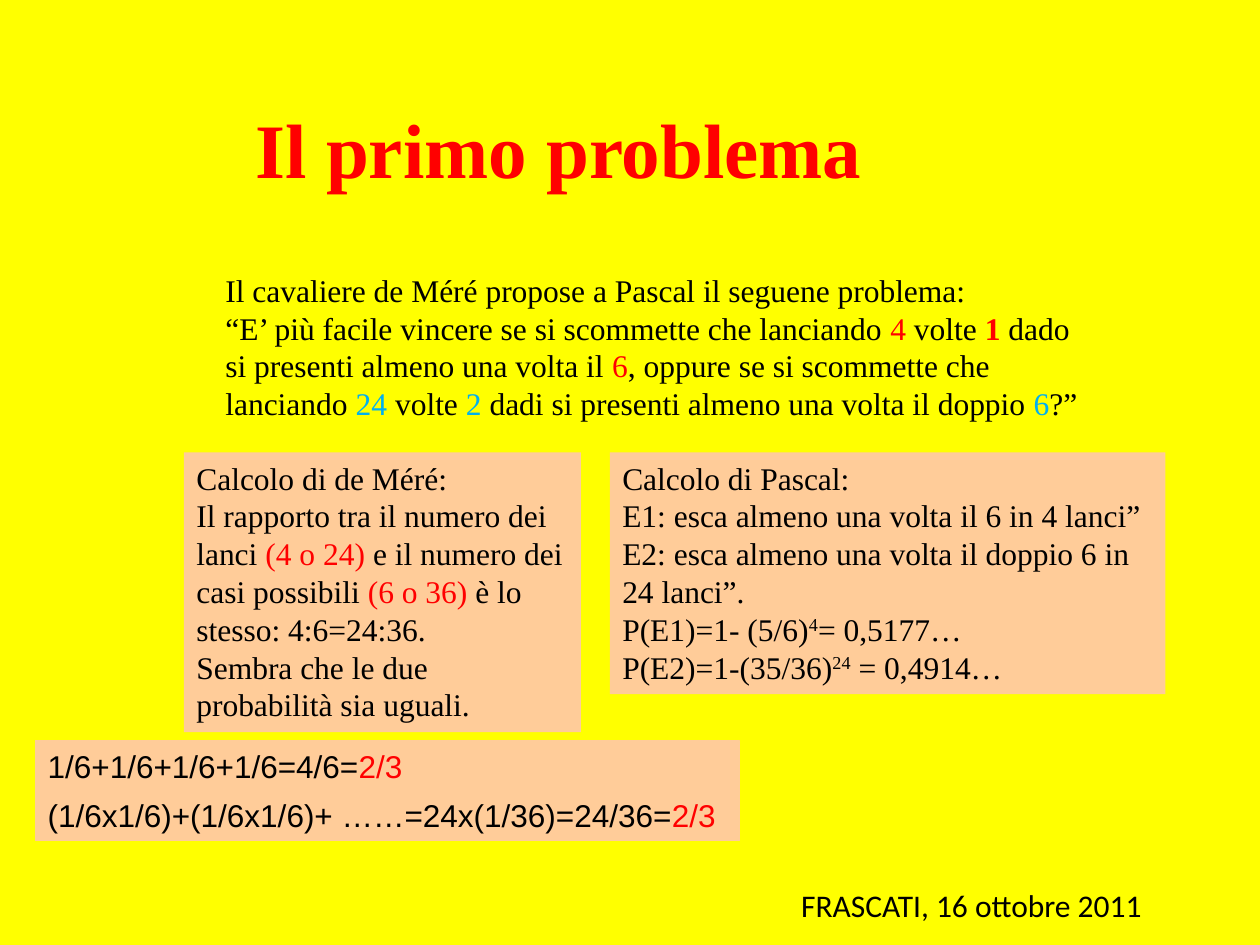
from dataclasses import dataclass

from pptx import Presentation
from pptx import util as u
from pptx.dml.color import RGBColor
from pptx.enum import shapes, text

COLORS = {
    "yellow": "FFFF00",
    "peach": "FFCC99",
    "black": "000000",
    "red": "FF0000",
    "blue": "00B0F0",
}
SERIF = "Times New Roman"


@dataclass
class Span:
    words: str
    color: str = "black"
    bold: bool = False
    raised: bool = False


@dataclass
class Block:
    left: float
    top: float
    width: float
    height: float
    paras: list[list[Span]]
    font: str = SERIF
    size: int = 18
    fill: str | None = None
    outline: str | None = None
    wrap: bool = True


def rgb(name: str) -> RGBColor:
    return RGBColor.from_string(COLORS[name])


def red(words: str, bold: bool = False) -> Span:
    return Span(words, "red", bold)


def blue(words: str) -> Span:
    return Span(words, "blue")


def power(words: str) -> Span:
    return Span(words, raised=True)


def write_span(para, part: Span, block: Block) -> None:
    span = para.add_run()
    span.text = part.words
    formats = {"name": block.font, "size": u.Pt(block.size), "bold": part.bold}
    for key, value in formats.items():
        setattr(span.font, key, value)
    span.font.color.rgb = rgb(part.color)
    if part.raised:
        span.font._element.set("baseline", "30000")


def draw_block(page, block: Block) -> None:
    place = [u.Inches(v) for v in (block.left, block.top, block.width, block.height)]
    if block.fill:
        box = page.shapes.add_shape(shapes.MSO_SHAPE.RECTANGLE, *place)
        box.shadow.inherit = False
        box.fill.solid()
        box.fill.fore_color.rgb = rgb(block.fill)
        if block.outline:
            box.line.color.rgb = rgb(block.outline)
            box.line.width = u.Pt(0.75)
        else:
            box.line.fill.background()
    else:
        box = page.shapes.add_textbox(*place)

    frame = box.text_frame
    formats = {
        "word_wrap": block.wrap,
        "auto_size": text.MSO_AUTO_SIZE.SHAPE_TO_FIT_TEXT,
        "vertical_anchor": text.MSO_ANCHOR.TOP,
    }
    for key, value in formats.items():
        setattr(frame, key, value)
    for number, parts in enumerate(block.paras):
        para = frame.add_paragraph() if number else frame.paragraphs[0]
        para.alignment = text.PP_ALIGN.LEFT
        for part in parts:
            write_span(para, part, block)


# Title, problem statement and footer
TITLE = Block(1.93, 0.76, 5.06, 0.84, [[red("Il primo problema", bold=True)]],
              size=44, wrap=False)
PROBLEM = Block(1.69, 2.1, 7.09, 1.31, [
    [Span("Il cavaliere de Méré propose a Pascal il seguene problema:")],
    [
        Span("“E’ più facile vincere se si scommette che lanciando "),
        red("4"),
        Span(" volte "),
        red("1", bold=True),
        Span(" dado si presenti almeno una volta il "),
        red("6"),
        Span(", oppure se si scommette che lanciando "),
        blue("24 "),
        Span("volte "),
        blue("2"),
        Span(" dadi si presenti almeno una volta il doppio "),
        blue("6"),
        Span("?”"),
    ],
])
FOOTER = Block(6.26, 6.98, 3.07, 0.4, [[Span("FRASCATI, 16 ottobre 2011")]],
               font="Calibri")

# The two rival calculations
DE_MERE = Block(1.46, 3.59, 3.15, 2.22, [
    [Span("Calcolo di de Méré:")],
    [
        Span("Il rapporto tra il numero dei lanci "),
        red("(4 o 24) "),
        Span("e il numero dei casi possibili "),
        red("(6 o 36)"),
        Span(" è lo stesso: 4:6=24:36."),
    ],
    [Span("Sembra che le due probabilità sia uguali.")],
], fill="peach")
PASCAL = Block(4.84, 3.59, 4.41, 1.92, [
    [Span("Calcolo di Pascal:")],
    [Span("E1: esca almeno una volta il 6 in 4 lanci”")],
    [Span("E2: esca almeno una volta il doppio 6 in 24 lanci”.")],
    [Span("P(E1)=1- (5/6)"), power("4"), Span("= 0,5177…")],
    [Span("P(E2)=1-(35/36)"), power("24"), Span(" = 0,4914…")],
], fill="peach")

# Sums that both give two thirds
SUMS = [
    Block(0.28, top, 5.59, 0.4, [[Span(formula), red("2/3")]],
          font="Arial", fill="peach", outline="peach")
    for top, formula in (
        (5.88, "1/6+1/6+1/6+1/6=4/6="),
        (6.27, "(1/6x1/6)+(1/6x1/6)+ ……=24x(1/36)=24/36="),
    )
]


def main() -> None:
    deck = Presentation()
    deck.slide_width, deck.slide_height = u.Inches(10), u.Inches(7.5)
    page = deck.slides.add_slide(deck.slide_layouts[6])
    page.background.fill.solid()
    page.background.fill.fore_color.rgb = rgb("yellow")
    for block in (TITLE, PROBLEM, DE_MERE, PASCAL, FOOTER, *SUMS):
        draw_block(page, block)
    deck.save("out.pptx")


if __name__ == "__main__":
    main()
